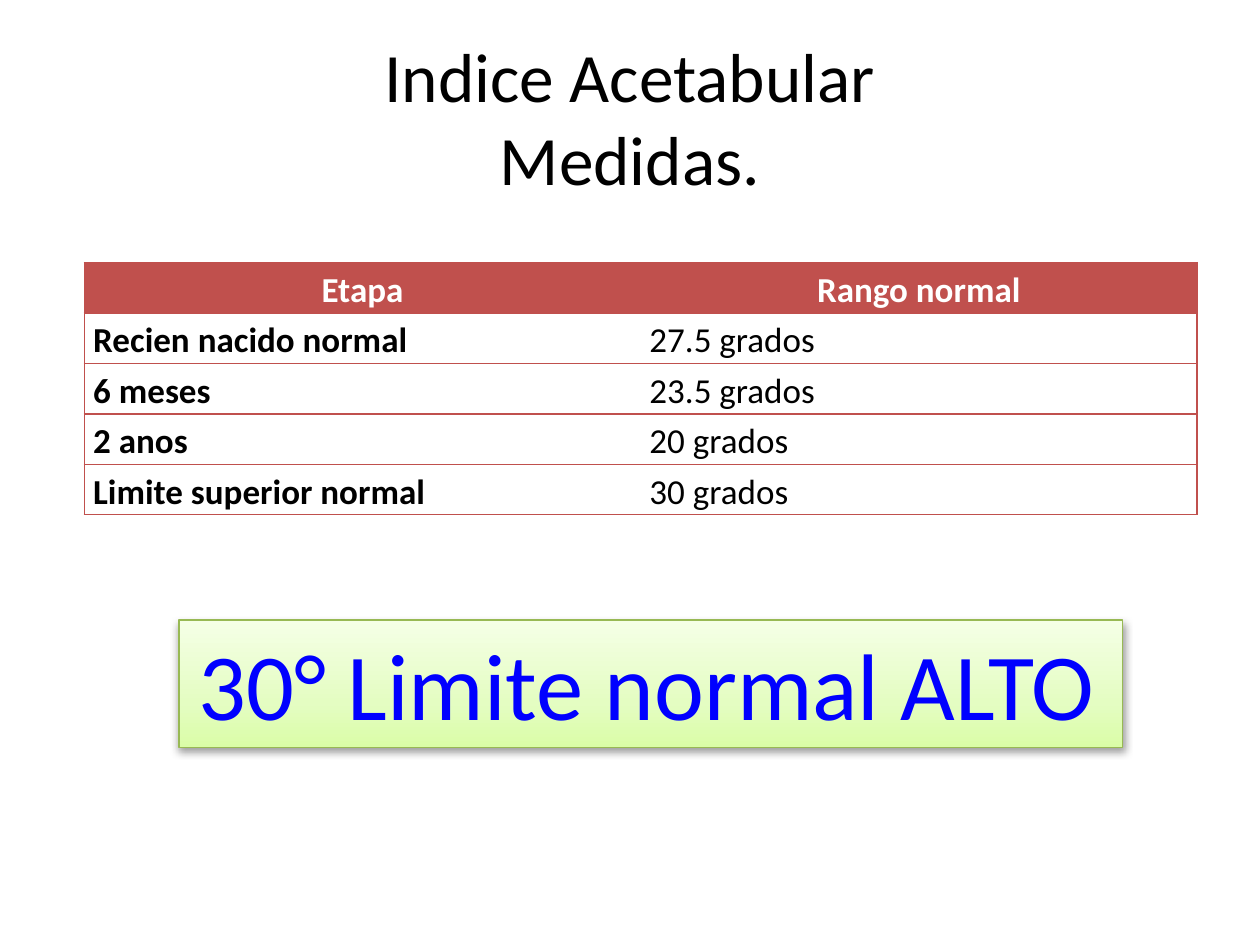
from typing import Any, NamedTuple

from lxml.etree import SubElement
from pptx import Presentation
from pptx.dml.color import RGBColor
from pptx.enum.shapes import MSO_SHAPE
from pptx.enum.text import MSO_ANCHOR, MSO_AUTO_SIZE, PP_ALIGN
from pptx.oxml import parse_xml
from pptx.oxml.ns import nsdecls, qn
from pptx.util import Emu, Inches, Pt

BLACK = RGBColor(0x00, 0x00, 0x00)
WHITE = RGBColor(0xFF, 0xFF, 0xFF)
BLUE = RGBColor(0x00, 0x00, 0xFF)
RED = RGBColor(0xC0, 0x50, 0x4D)
GREEN = RGBColor(0x98, 0xB9, 0x54)
GREEN_STOPS = (
    (0, RGBColor(0xDA, 0xFD, 0xA7)),
    (35, RGBColor(0xE4, 0xFD, 0xC2)),
    (100, RGBColor(0xF5, 0xFF, 0xE6)),
)
FONT = "Calibri"
NO_STYLE = "{2D5ABB26-0587-4C30-8999-92F81FD0307C}"
SLIDE_W, SLIDE_H = Inches(10), Inches(7.5)


class Box(NamedTuple):
    """Left, top, width and height as shares of the slide's size."""
    x: float
    y: float
    w: float
    h: float

    def emu(self) -> tuple[Emu, ...]:
        sizes = (SLIDE_W, SLIDE_H, SLIDE_W, SLIDE_H)
        return tuple(Emu(round(v * s)) for v, s in zip(self, sizes))


class Row(NamedTuple):
    stage: str
    normal_range: str


TITLE_BOX = Box(0.05, 0.04, 0.9, 1 / 6)
TABLE_BOX = Box(0.067, 0.278, 0.883, 2 / 7.5)
LIMIT_BOX = Box(0.142, 0.656, 0.749, 0.135)
ROWS = (
    Row("Etapa", "Rango normal"),
    Row("Recien nacido normal", "27.5 grados"),
    Row("6 meses", "23.5 grados"),
    Row("2 anos", "20 grados"),
    Row("Limite superior normal", "30 grados"),
)


def set_attrs(obj: Any, **values: Any) -> None:
    for name, value in values.items():
        setattr(obj, name, value)


def format_font(font: Any, size: float, color: RGBColor, bold: bool = False) -> None:
    set_attrs(font, name=FONT, size=Pt(size), bold=bold)
    font.color.rgb = color


def add_title(slide: Any, text: str) -> None:
    tf = slide.shapes.add_textbox(*TITLE_BOX.emu()).text_frame
    set_attrs(tf, word_wrap=True, vertical_anchor=MSO_ANCHOR.MIDDLE, text=text)
    # A vertical tab in the text makes a line break within the one paragraph.
    p = tf.paragraphs[0]
    p.alignment = PP_ALIGN.CENTER
    format_font(p.font, 39.6, BLACK)
    for r in p.runs:
        format_font(r.font, 39.6, BLACK)


def add_borders(cell: Any, sides: str) -> None:
    tc_pr = cell._tc.get_or_add_tcPr()
    for i, side in enumerate(sides):
        tc_pr.insert(i, parse_xml(
            f'<a:ln{side} {nsdecls("a")} w="{Pt(1)}"><a:solidFill>'
            f'<a:srgbClr val="{RED}"/></a:solidFill></a:ln{side}>'))


def fill_cell(cell: Any, text: str, header: bool, first: bool) -> None:
    set_attrs(cell, margin_left=Inches(0.07), margin_right=Inches(0.07),
              margin_top=0, margin_bottom=0)
    if header:
        cell.fill.solid()
        cell.fill.fore_color.rgb = RED
    else:
        cell.fill.background()
    add_borders(cell, "LTB" if first else "RTB")
    p = cell.text_frame.paragraphs[0]
    set_attrs(p, line_spacing=1.15,
              alignment=PP_ALIGN.CENTER if header else PP_ALIGN.LEFT)
    r = p.add_run()
    r.text = text
    format_font(r.font, 20, WHITE if header else BLACK, header or first)


def add_ranges_table(slide: Any, rows: tuple[Row, ...]) -> None:
    table = slide.shapes.add_table(len(rows), 2, *TABLE_BOX.emu()).table
    set_attrs(table, first_row=False, horz_banding=False)
    table._tbl.tblPr.find(qn("a:tableStyleId")).text = NO_STYLE
    for i, row in enumerate(rows):
        for j, text in enumerate(row):
            fill_cell(table.cell(i, j), text, header=i == 0, first=j == 0)


def fill_gradient(sp: Any) -> None:
    """Fill from bottom to top with the green stops."""
    sp.fill.gradient()
    sp.fill.gradient_angle = 90
    stops = sp._element.spPr.find(f'{qn("a:gradFill")}/{qn("a:gsLst")}')
    for old in list(stops):
        stops.remove(old)
    for share, color in GREEN_STOPS:
        stop = SubElement(stops, qn("a:gs"), pos=str(share * 1000))
        SubElement(stop, qn("a:srgbClr"), val=str(color))


def add_shadow(sp: Any) -> None:
    sp.shadow.inherit = False
    sp._element.spPr.find(qn("a:effectLst")).append(parse_xml(
        f'<a:outerShdw {nsdecls("a")} blurRad="{Pt(5)}" dist="{Pt(1.6)}" '
        'dir="5400000" rotWithShape="0"><a:srgbClr val="000000">'
        '<a:alpha val="38000"/></a:srgbClr></a:outerShdw>'))


def add_limit(slide: Any, text: str) -> None:
    sp = slide.shapes.add_shape(MSO_SHAPE.RECTANGLE, *LIMIT_BOX.emu())
    fill_gradient(sp)
    sp.line.color.rgb = GREEN
    sp.line.width = Pt(0.75)
    add_shadow(sp)
    tf = sp.text_frame
    set_attrs(tf, word_wrap=False, auto_size=MSO_AUTO_SIZE.SHAPE_TO_FIT_TEXT,
              vertical_anchor=MSO_ANCHOR.TOP)
    p = tf.paragraphs[0]
    p.alignment = PP_ALIGN.LEFT
    for part, size, color in ((" ", 18, BLACK), (text, 54, BLUE)):
        r = p.add_run()
        r.text = part
        format_font(r.font, size, color)


def main() -> None:
    prs = Presentation()
    set_attrs(prs, slide_width=SLIDE_W, slide_height=SLIDE_H)
    slide = prs.slides.add_slide(prs.slide_layouts[6])
    add_title(slide, "Indice Acetabular\vMedidas.")
    add_limit(slide, "30° Limite normal ALTO")
    add_ranges_table(slide, ROWS)
    prs.save("out.pptx")


if __name__ == "__main__":
    main()
